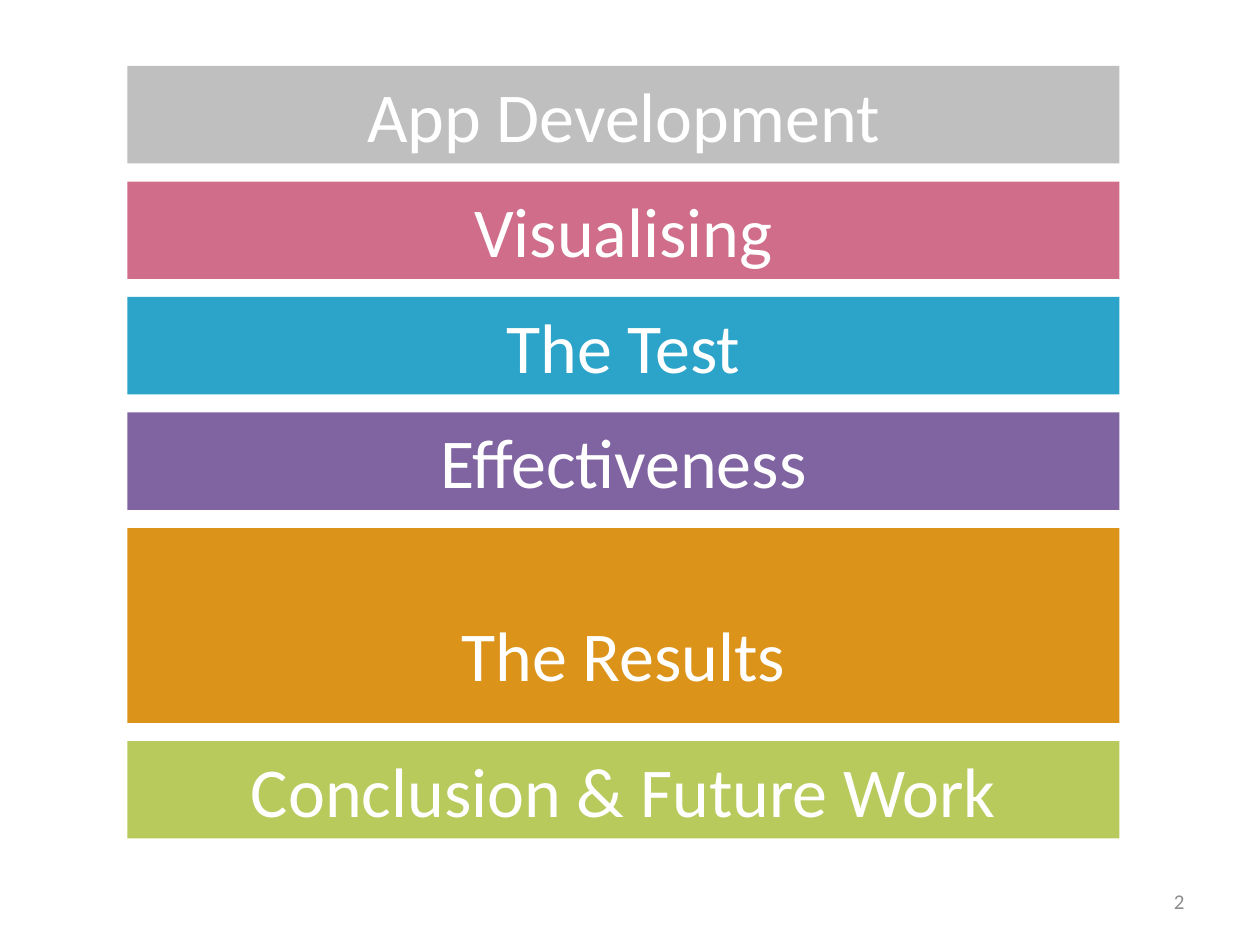
from dataclasses import dataclass

from pptx import Presentation
from pptx.dml.color import RGBColor
from pptx.enum.shapes import MSO_SHAPE as SHAPE
from pptx.enum.text import MSO_ANCHOR as ANCHOR, MSO_AUTO_SIZE as FIT, PP_ALIGN as ALIGN
from pptx.util import Emu, Pt

PX_PER_INCH = 252


def px(n):
    return Emu(round(n * 914400 / PX_PER_INCH))


@dataclass(frozen=True)
class Theme:
    font: str = "Calibri"
    bar_size: int = 40
    number_size: int = 12
    white: str = "FFFFFF"
    muted: str = "8C8C8C"
    grey: str = "BFBFBF"
    pink: str = "D06D8B"
    blue: str = "2CA4C9"
    purple: str = "8064A2"
    orange: str = "DC931A"
    green: str = "B7CA5B"


def write(tf, text, *, font, size, color, align, spacing=None):
    tf.word_wrap = True
    p = tf.paragraphs[0]
    p.alignment = align
    if spacing:
        p.line_spacing = spacing
    r = p.add_run()
    r.text = text
    r.font.name = font
    r.font.size = Pt(size)
    r.font.color.rgb = RGBColor.from_string(color)


class Deck:
    def __init__(self, prs, theme):
        self.theme = theme
        self.slide = prs.slides.add_slide(prs.slide_layouts[6])

    def bar(self, text, color, x, y, w, h, spacing=None):
        sp = self.slide.shapes.add_shape(SHAPE.RECTANGLE, px(x), px(y), px(w), px(h))
        sp.shadow.inherit = False
        sp.fill.solid()
        sp.fill.fore_color.rgb = RGBColor.from_string(color)
        sp.line.fill.background()
        tf = sp.text_frame
        tf.vertical_anchor = ANCHOR.TOP
        tf.auto_size = FIT.SHAPE_TO_FIT_TEXT
        if spacing:
            tf.margin_top, tf.margin_bottom = 0, px(50)
        write(tf, text, font=self.theme.font, size=self.theme.bar_size,
              color=self.theme.white, align=ALIGN.CENTER, spacing=spacing)

    def page_number(self, text, x, y, w, h):
        tf = self.slide.shapes.add_textbox(px(x), px(y), px(w), px(h)).text_frame
        tf.vertical_anchor = ANCHOR.MIDDLE
        write(tf, text, font=self.theme.font, size=self.theme.number_size,
              color=self.theme.muted, align=ALIGN.RIGHT)


def main():
    prs = Presentation()
    prs.slide_width, prs.slide_height = px(2520), px(1890)
    theme = Theme()
    deck = Deck(prs, theme)

    left, top, width, gap = 255, 132, 1984, 36
    single, double = 195, 390
    topics = [
        ("App Development", theme.grey, single, None),
        ("Visualising", theme.pink, single, None),
        ("The Test", theme.blue, single, None),
        ("Effectiveness", theme.purple, single, None),
        ("The Results", theme.orange, double, 2.0),
        ("Conclusion & Future Work", theme.green, single, None),
    ]
    for text, color, height, spacing in topics:
        deck.bar(text, color, left, top, width, height, spacing)
        top += height + gap

    deck.page_number("2", 1806, 1752, 588, 100)
    prs.save("out.pptx")


if __name__ == "__main__":
    main()
